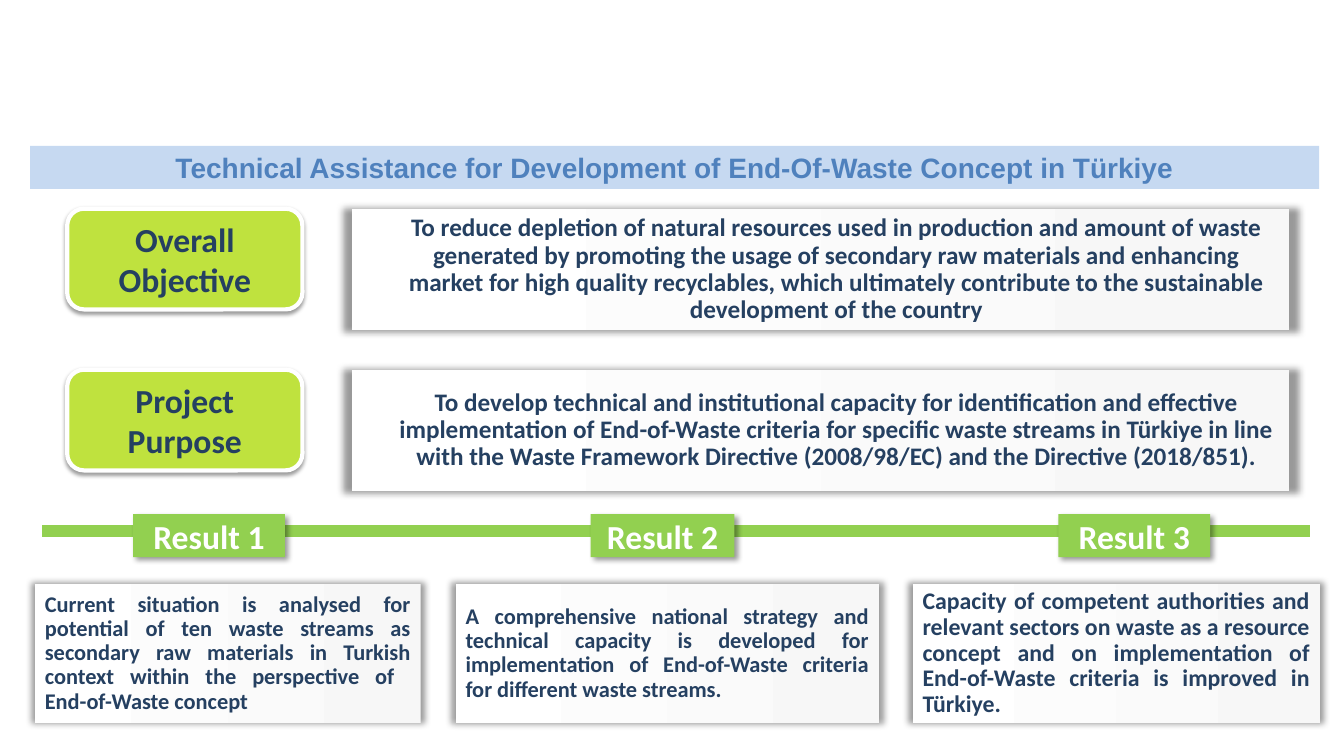
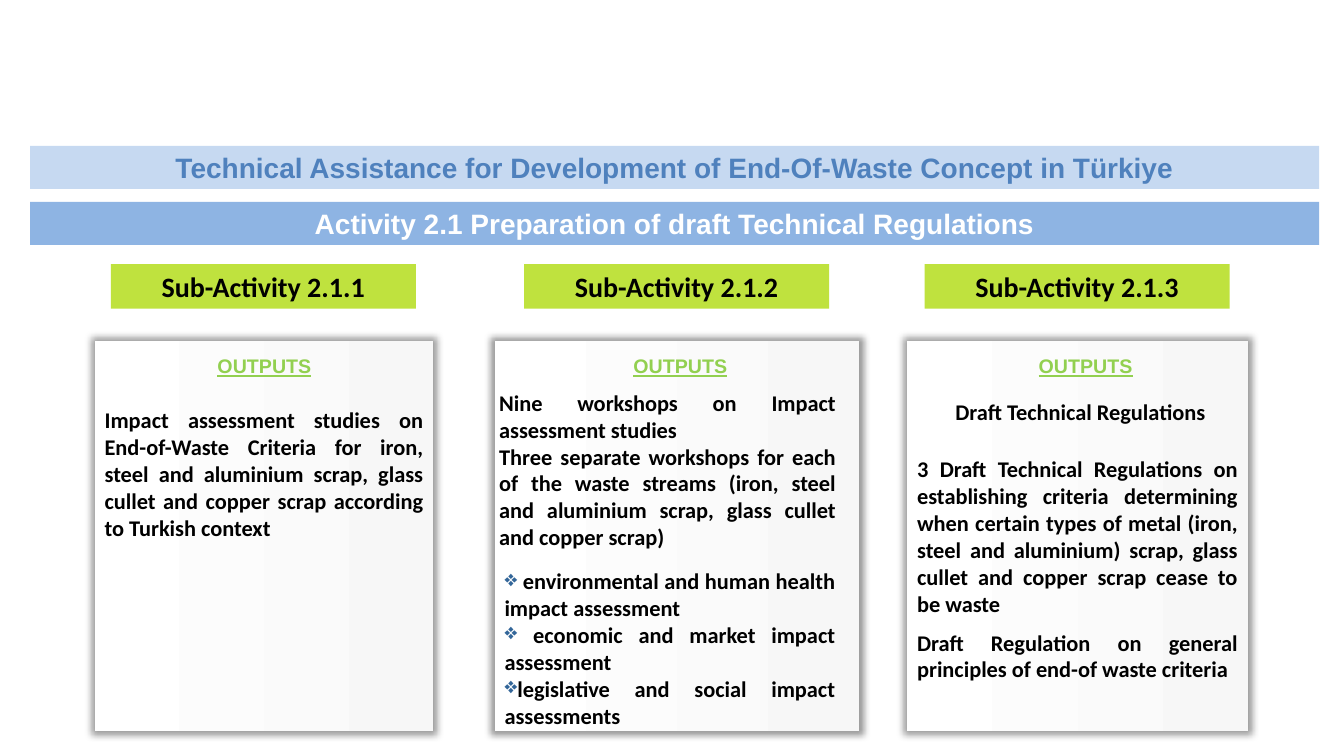
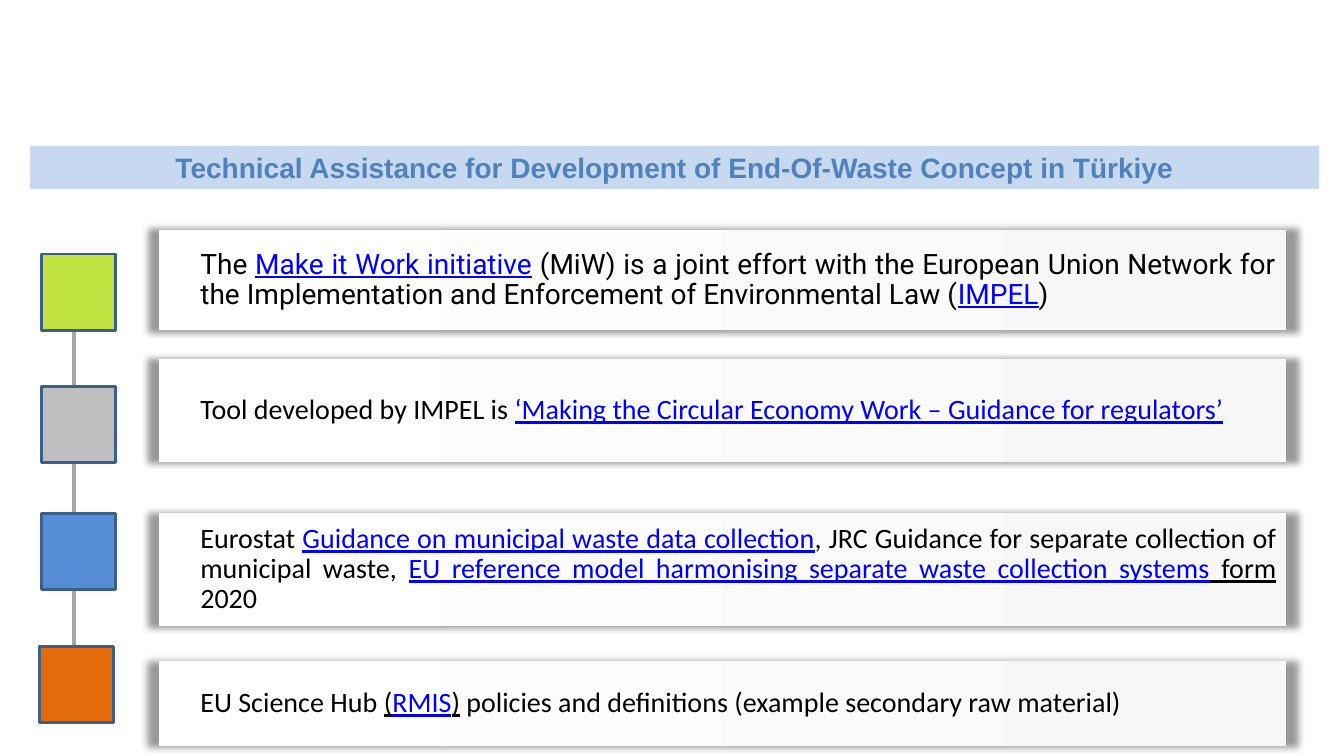
"""Build three slides on the end-of-waste project: objectives, sub-activities and resources."""
from dataclasses import dataclass

from lxml import etree
from pptx import Presentation
from pptx.dml.color import RGBColor
from pptx.enum.shapes import MSO_CONNECTOR, MSO_SHAPE
from pptx.enum.text import MSO_ANCHOR, MSO_AUTO_SIZE, PP_ALIGN
from pptx.oxml.ns import qn
from pptx.util import Inches, Pt

RECTANGLE, ROUNDED = MSO_SHAPE.RECTANGLE, MSO_SHAPE.ROUNDED_RECTANGLE
LEFT, CENTER, JUSTIFY = PP_ALIGN.LEFT, PP_ALIGN.CENTER, PP_ALIGN.JUSTIFY
TOP, MIDDLE = MSO_ANCHOR.TOP, MSO_ANCHOR.MIDDLE
STRAIGHT = MSO_CONNECTOR.STRAIGHT


@dataclass(frozen=True)
class Theme:
    """Colours, fonts and type sizes shared by the slides."""
    title_band: str = "C6D9F1"
    title_text: str = "4F81BD"
    activity_band: str = "8EB4E3"
    lime: str = "BFE23E"
    green: str = "92D050"
    navy: str = "254061"
    black: str = "000000"
    white: str = "FFFFFF"
    link: str = "0000FF"
    bullet: str = "336699"
    grey: str = "BFBFBF"
    blue: str = "558ED5"
    orange: str = "E46C0A"
    rail: str = "A6A6A6"
    square_edge: str = "3A5F8C"
    panel_shade: str = "F7F7F7"
    heading_font: str = "Arial"
    body_font: str = "Calibri"
    label_size: int = 24
    title_size: int = 20
    panel_size: int = 18
    body_size: int = 16
    small_size: int = 14


THEME = Theme()
PANEL = "panel"
PANEL_SHADOW = {"blur": 5, "distance": 0, "angle": 0, "alpha": 40, "scale": 102}
TAG_SHADOW = {"blur": 4, "distance": 3, "angle": 45, "alpha": 40, "scale": 100}
BUTTON_SHADOW = {"blur": 3.1, "distance": 1.6, "angle": 90, "alpha": 38, "scale": 100}

presentation = Presentation()
presentation.slide_width, presentation.slide_height = Inches(13.33), Inches(7.5)
X_SHARE = presentation.slide_width / 100
Y_SHARE = presentation.slide_height / 100


def add_box(slide, place, fill=None, line=None, shadow=None, preset=RECTANGLE):
    """Add a shape at left, top, width, height in percent of the slide."""
    left, top, width, height = place
    shape = slide.shapes.add_shape(preset, round(left * X_SHARE), round(top * Y_SHARE),
                                   round(width * X_SHARE), round(height * Y_SHARE))
    shape.shadow.inherit = False
    if fill == PANEL:
        shape.fill.gradient()
        shape.fill.gradient_angle = 180
        for stop, color in zip(shape.fill.gradient_stops, (THEME.panel_shade, THEME.white)):
            stop.color.rgb = RGBColor.from_string(color)
        shadow = PANEL_SHADOW
    elif fill:
        shape.fill.solid()
        shape.fill.fore_color.rgb = RGBColor.from_string(fill)
    else:
        shape.fill.background()
    if line:
        color, width = line
        shape.line.color.rgb = RGBColor.from_string(color)
        shape.line.width = Pt(width)
    else:
        shape.line.fill.background()
    if shadow:
        scale = str(shadow["scale"] * 1000)
        outer = etree.SubElement(
            shape._element.spPr.find(qn("a:effectLst")), qn("a:outerShdw"),
            blurRad=str(Pt(shadow["blur"])), dist=str(Pt(shadow["distance"])),
            dir=str(shadow["angle"] * 60000), sx=scale, sy=scale, algn="ctr", rotWithShape="0")
        color = etree.SubElement(outer, qn("a:srgbClr"), val=THEME.black)
        etree.SubElement(color, qn("a:alpha"), val=str(shadow["alpha"] * 1000))
    return shape


def write(shape, paragraphs, color=THEME.black, align=JUSTIFY, anchor=MIDDLE, wrap=True,
          spacing=1.0, indent=0, bullet=None, **font):
    """Write paragraphs, each a string or a list of (text, colour, underline) runs."""
    frame = shape.text_frame
    for name, value in {"word_wrap": wrap, "auto_size": MSO_AUTO_SIZE.NONE,
                        "vertical_anchor": anchor}.items():
        setattr(frame, name, value)
    font = {"name": THEME.body_font, "bold": True, **font}
    for index, content in enumerate(paragraphs):
        paragraph = frame.add_paragraph() if index else frame.paragraphs[0]
        properties = paragraph._p.get_or_add_pPr()
        properties.set("marL", str(Inches(indent)))
        properties.set("indent", "0")
        if bullet:
            bullet_color = etree.SubElement(properties, qn("a:buClr"))
            etree.SubElement(bullet_color, qn("a:srgbClr"), val=THEME.bullet)
            etree.SubElement(properties, qn("a:buChar"), char=bullet)
        paragraph.alignment = align
        paragraph.line_spacing = spacing
        runs = [(content, color, font.get("underline", False))] if isinstance(content, str) else content
        for text, run_color, underline in runs:
            for number, piece in enumerate(text.split("\v")):
                if number:
                    paragraph.add_line_break()
                run = paragraph.add_run()
                run.text = piece
                for name, value in {**font, "underline": underline}.items():
                    setattr(run.font, name, value)
                run.font.color.rgb = RGBColor.from_string(run_color)


band_font = {"name": THEME.heading_font, "size": Pt(THEME.title_size), "align": CENTER}
slides = []
for _ in range(3):
    slide = presentation.slides.add_slide(presentation.slide_layouts[5])
    title = slide.shapes.title
    title.left, title.top = round(2.25 * X_SHARE), round(19.3 * Y_SHARE)
    title.width, title.height = round(95.9 * X_SHARE), round(5.7 * Y_SHARE)
    title.fill.solid()
    title.fill.fore_color.rgb = RGBColor.from_string(THEME.title_band)
    write(title, ["Technical Assistance for Development of End-Of-Waste Concept in Türkiye"],
          THEME.title_text, **band_font)
    slides.append(slide)
objectives, activities, resources = slides

goals = [
    ("Overall Objective",
     "To reduce depletion of natural resources used in production and amount of waste generated "
     "by promoting the usage of secondary raw materials and enhancing market for high quality "
     "recyclables, which ultimately contribute to the sustainable development of the country"),
    ("Project Purpose",
     "To develop technical and institutional capacity for identification and effective "
     "implementation of End-of-Waste criteria for specific waste streams in Türkiye in line with "
     "the Waste Framework Directive (2008/98/EC) and the Directive (2018/851)."),
]
for row, (label, statement) in enumerate(goals):
    top = 27.6 + 21.3 * row
    button = add_box(objectives, (5, top, 17.5, 13.33), THEME.lime, (THEME.white, 3),
                     BUTTON_SHADOW, ROUNDED)
    write(button, [label], THEME.navy, CENTER, size=Pt(THEME.label_size))
    panel = add_box(objectives, (26.2, top, 69.75, 16.1), PANEL)
    write(panel, [statement], THEME.navy, CENTER, spacing=0.9, indent=0.31,
          size=Pt(THEME.panel_size))

add_box(objectives, (3, 69.3, 94.6, 1.9), THEME.green, (THEME.white, 2))
results = [
    (9.9, 11.3, 2.6, 28.7, THEME.body_size,
     "Current situation is analysed for potential of ten waste streams as secondary raw materials "
     "in Turkish context within the perspective of \vEnd-of-Waste concept"),
    (43.95, 10.7, 33.9, 31.5, THEME.body_size,
     "A comprehensive national strategy and technical capacity is developed for implementation of "
     "End-of-Waste criteria for different waste streams."),
    (78.75, 11.3, 67.9, 30.3, THEME.body_size + 1,
     "Capacity of competent authorities and relevant sectors on waste as a resource concept and on "
     "implementation of End-of-Waste criteria is improved in Türkiye."),
]
for number, (tag_left, tag_width, left, width, size, result) in enumerate(results, 1):
    tag = add_box(objectives, (tag_left, 68, tag_width, 5.7), THEME.green, shadow=TAG_SHADOW)
    write(tag, [f"Result {number}"], THEME.white, CENTER, size=Pt(THEME.label_size))
    panel = add_box(objectives, (left, 77.3, width, 18.3), PANEL)
    write(panel, [result], THEME.navy, spacing=0.9, size=Pt(size))

activity = add_box(activities, (2.25, 26.7, 95.9, 5.7), THEME.activity_band)
write(activity, ["Activity 2.1 Preparation of draft Technical Regulations"], THEME.white, **band_font)
columns = [(8.25, 7.05, 25.2, 15.4), (39, 36.8, 27.15, 46.35), (68.8, 67.5, 25.35, 76.5)]
for number, (tag_left, left, width, heading_left) in enumerate(columns, 1):
    tag = add_box(activities, (tag_left, 34.95, 22.7, 5.9), THEME.lime)
    write(tag, [f"Sub-Activity 2.1.{number}"], align=CENTER, anchor=TOP, size=Pt(THEME.title_size))
    add_box(activities, (left, 45.1, width, 51.6), PANEL)
    heading = add_box(activities, (heading_left, 46.2, 8.55, 4.5))
    write(heading, ["OUTPUTS"], THEME.green, CENTER, TOP, wrap=False, name=THEME.heading_font,
          size=Pt(THEME.small_size), underline=True)

outputs = [
    ((7.05, 53.1, 25.2, 19.3), None,
     ["Impact assessment studies on End-of-Waste Criteria for iron, steel and aluminium scrap, "
      "glass cullet and copper scrap according to Turkish context"]),
    ((36.4, 50.8, 26.55, 22.9), None,
     ["Nine workshops on Impact assessment studies",
      "Three separate workshops for each of the waste streams (iron, steel and aluminium scrap, "
      "glass cullet and copper scrap)"]),
    ((36.8, 74.4, 26.1, 22.9), "❖",
     [" environmental and human health impact assessment",
      " economic and market impact assessment",
      "legislative and social impact assessments"]),
    ((70.35, 52, 20.85, 4.9), None, ["Draft Technical Regulations"]),
    ((67.5, 59.6, 25.35, 22.9), None,
     ["3 Draft Technical Regulations on establishing criteria determining when certain types of "
      "metal (iron, steel and aluminium) scrap, glass cullet and copper scrap cease to be waste"]),
    ((67.5, 82.5, 25.35, 8.5), None,
     ["Draft Regulation on general principles of end-of waste criteria"]),
]
for place, bullet, paragraphs in outputs:
    write(add_box(activities, place), paragraphs, anchor=TOP, bullet=bullet,
          size=Pt(THEME.body_size))

rail_x = round(5.5 * X_SHARE)
rail = resources.shapes.add_connector(STRAIGHT, rail_x, round(33.6 * Y_SHARE),
                                      rail_x, round(90.5 * Y_SHARE))
rail.line.color.rgb = RGBColor.from_string(THEME.rail)
rail.line.width = Pt(3)
etree.SubElement(rail._element.spPr, qn("a:effectLst"))

BLACK, LINK = THEME.black, THEME.link
references = [
    (THEME.lime, 3.1, 33.6, 30.4, 13.3, "Roboto",
     [("The ", BLACK, False), ("Make it Work initiative", LINK, True),
      (" (MiW) is a joint effort with the European Union Network for the Implementation and "
       "Enforcement of Environmental Law (", BLACK, False),
      ("IMPEL", LINK, True), (")", BLACK, False)]),
    (THEME.grey, 3.1, 51.1, 47.5, 13.6, THEME.body_font,
     [("Tool developed by IMPEL is ", BLACK, False),
      ("‘Making the Circular Economy Work – Guidance for regulators’", LINK, True)]),
    (THEME.blue, 3.1, 67.9, 67.9, 14.9, THEME.body_font,
     [("Eurostat ", BLACK, False), ("Guidance on municipal waste data collection", LINK, True),
      (", JRC Guidance for separate collection of municipal waste, ", BLACK, False),
      ("EU reference model harmonising separate waste collection systems", LINK, True),
      (" form", BLACK, True), (" 2020", BLACK, False)]),
    (THEME.orange, 2.95, 85.5, 87.5, 11.2, THEME.body_font,
     [("EU Science Hub ", BLACK, False), ("(", BLACK, True), ("RMIS", LINK, True),
      (")", BLACK, True),
      (" policies and definitions (example secondary raw material)", BLACK, False)]),
]
for color, left, square_top, panel_top, height, font_name, runs in references:
    add_box(resources, (left, square_top, 5.5, 10.1), color, (THEME.square_edge, 2))
    panel = add_box(resources, (11.85, panel_top, 83.85, height), PANEL)
    write(panel, [runs], spacing=0.9, indent=0.31, name=font_name, bold=False,
          size=Pt(THEME.title_size))

presentation.save("out.pptx")
